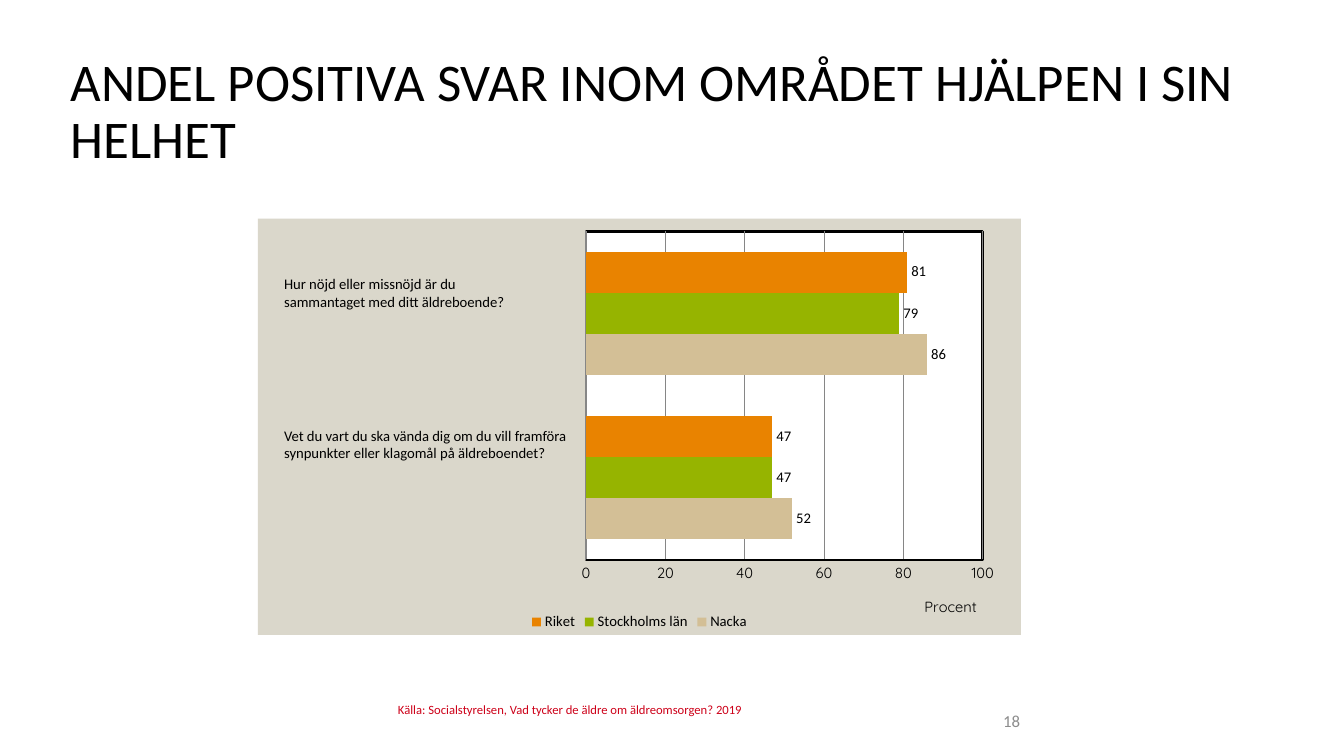
"""Build the slide on positive answers about elderly care as a whole."""
from lxml.etree import fromstring
from pptx import Presentation
from pptx.chart.data import CategoryChartData
from pptx.dml.color import RGBColor
from pptx.enum.chart import XL_CHART_TYPE, XL_LABEL_POSITION, XL_LEGEND_POSITION, XL_TICK_MARK
from pptx.enum.text import MSO_ANCHOR, MSO_AUTO_SIZE, PP_ALIGN
from pptx.oxml.ns import nsdecls, qn
from pptx.util import Cm, Pt

COLORS = {
    "text": "000000", "number": "8C8C8C", "source": "CD0019", "panel": "DAD7CB",
    "plot": "FFFFFF", "grid": "868686",
    "Nacka": "D3BF96", "Stockholms län": "96B400", "Riket": "E98300",
}
ANSWERS = {"Nacka": (52, 86), "Stockholms län": (47, 79), "Riket": (47, 81)}


def add_text(page, area, lines, size, color="text", inset=True, anchor=MSO_ANCHOR.TOP,
             align=PP_ALIGN.LEFT, spacing=None, grow=False):
    box = page.shapes.add_textbox(*(Cm(length) for length in area))
    frame = box.text_frame
    frame.word_wrap = True
    frame.vertical_anchor = anchor
    frame.auto_size = MSO_AUTO_SIZE.SHAPE_TO_FIT_TEXT if grow else MSO_AUTO_SIZE.NONE
    if not inset:
        frame.margin_left = frame.margin_right = frame.margin_top = frame.margin_bottom = 0
    for index, line in enumerate(lines):
        para = frame.add_paragraph() if index else frame.paragraphs[0]
        para.alignment = align
        para.line_spacing = spacing
        span = para.add_run()
        span.text = line
        span.font.name = "Calibri"
        span.font.size = Pt(size)
        span.font.color.rgb = RGBColor.from_string(COLORS[color])


def chart_layout(**places):
    parts = "".join(f'<c:{name} val="{value}"/>' for name, value in places.items())
    return fromstring(f'<c:layout {nsdecls("c")}><c:manualLayout>{parts}</c:manualLayout></c:layout>')


deck = Presentation()
deck.slide_width, deck.slide_height = Cm(33.87), Cm(19.05)
page = deck.slides.add_slide(deck.slide_layouts[6])

add_text(page, (1.78, 1.4, 29.77, 3.15), ["ANDEL POSITIVA SVAR INOM OMRÅDET HJÄLPEN I SIN HELHET"],
         37.8, inset=False, spacing=0.9)

data = CategoryChartData()
data.categories = ["1", "2"]
for region, values in ANSWERS.items():
    data.add_series(region, values)
chart = page.shapes.add_chart(XL_CHART_TYPE.BAR_CLUSTERED, Cm(6.5), Cm(5.51), Cm(19.23), Cm(10.49), data).chart
chart.has_title = False
chart.font.name = "Calibri"
chart.font.size = Pt(10.5)
chart.font.color.rgb = RGBColor.from_string(COLORS["text"])
chart.has_legend = True
chart.legend.position = XL_LEGEND_POSITION.BOTTOM
chart.legend.include_in_layout = False

bars = chart.plots[0]
bars.gap_width = 100
bars.overlap = 0
bars.vary_by_categories = False
for series in bars.series:
    series.format.fill.solid()
    series.format.fill.fore_color.rgb = RGBColor.from_string(COLORS[series.name])
    series.data_labels.show_value = True
    series.data_labels.position = XL_LABEL_POSITION.OUTSIDE_END

chart.category_axis.visible = False
axis = chart.value_axis
axis.minimum_scale, axis.maximum_scale, axis.major_unit = 0, 100, 20
axis.major_tick_mark = axis.minor_tick_mark = XL_TICK_MARK.NONE
axis.tick_labels.font.name = "Quicksand"
axis.tick_labels.font.size = Pt(10.5)
axis.format.line.color.rgb = RGBColor.from_string(COLORS["text"])
axis.format.line.width = Pt(2)
axis.major_gridlines.format.line.color.rgb = RGBColor.from_string(COLORS["grid"])
axis.major_gridlines.format.line.width = Pt(0.75)

span = axis.axis_title.text_frame.paragraphs[0].add_run()
span.text = "Procent"
span.font.name = "Quicksand"
span.font.size = Pt(10.5)
span.font.bold = False
span.font.color.rgb = RGBColor.from_string(COLORS["text"])

space = chart.element
plot_area = space.find(".//" + qn("c:plotArea"))
axis_title = plot_area.find(".//" + qn("c:title"))
for holder in (plot_area, axis_title):
    for layout in holder.findall(qn("c:layout")):
        holder.remove(layout)
plot_area.insert(0, chart_layout(layoutTarget="inner", xMode="edge", yMode="edge",
                                 x=0.43, y=0.03, w=0.52, h=0.79))
axis_title.find(qn("c:tx")).addnext(chart_layout(xMode="edge", yMode="edge", x=0.87, y=0.9))

panel_style, plot_style = (
    fromstring(f'<c:spPr {nsdecls("c", "a")}><a:solidFill><a:srgbClr val="{COLORS[fill]}"/></a:solidFill>'
               f'<a:ln w="{Pt(2)}">{line}</a:ln></c:spPr>')
    for fill, line in (
        ("panel", "<a:noFill/>"),
        ("plot", f'<a:solidFill><a:srgbClr val="{COLORS["text"]}"/></a:solidFill>'),
    )
)
space.find(qn("c:chart")).addnext(panel_style)
plot_area.append(plot_style)

add_text(page, (6.91, 6.81, 7.47, 1.14),
         ["Hur nöjd eller missnöjd är du", "sammantaget med ditt äldreboende?"], 10.5, grow=True)
add_text(page, (6.91, 10.62, 7.7, 1.6),
         ["Vet du vart du ska vända dig om du vill framföra synpunkter eller klagomål på äldreboendet?"],
         10.5, grow=True)
add_text(page, (23.93, 17.65, 2.03, 1.02), ["18"], 12, "number",
         anchor=MSO_ANCHOR.MIDDLE, align=PP_ALIGN.RIGHT)
add_text(page, (10.03, 17.5, 15.01, 0.74),
         ["Källa: Socialstyrelsen, Vad tycker de äldre om äldreomsorgen? 2019"], 9, "source",
         inset=False, anchor=MSO_ANCHOR.MIDDLE)

deck.save("out.pptx")
